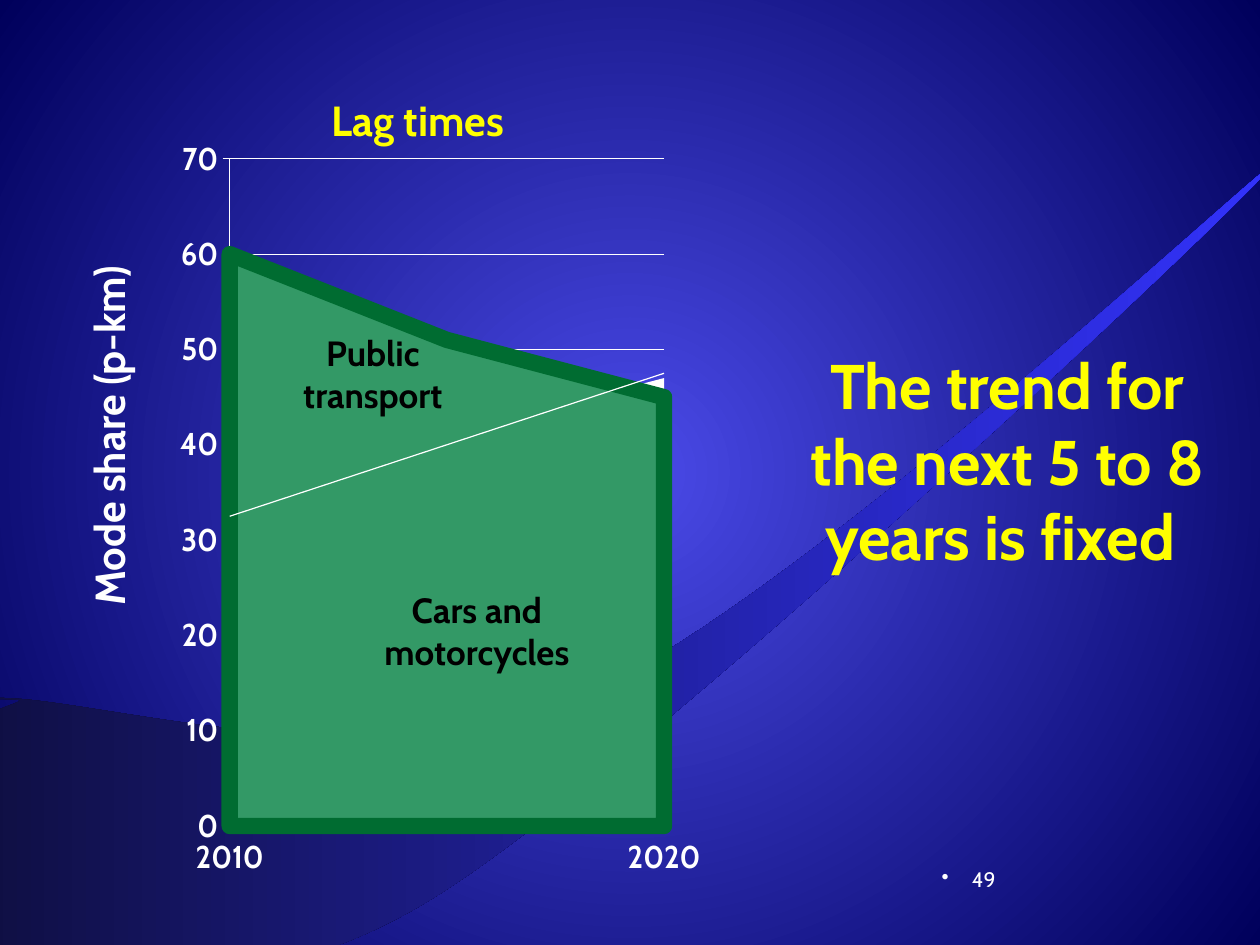
from pptx import Presentation
from pptx.chart.data import CategoryChartData
from pptx.dml.color import RGBColor
from pptx.enum.chart import XL_CHART_TYPE as CHART, XL_TICK_MARK as TICK
from pptx.enum.text import MSO_ANCHOR as ANCHOR, PP_ALIGN as ALIGN
from pptx.oxml import parse_xml
from pptx.oxml.ns import nsdecls, qn
from pptx.util import Inches, Pt
from lxml.etree import SubElement

FONT = "Cabin"
COLORS = {
    "bg_center": "4A4AE9", "bg_edge": "00005B",
    "swoosh_dark": "0D0D38", "swoosh_bright": "3333FF",
    "title": "FFFF00", "light": "FFFFFF", "label": "000000",
    "area": "339966", "area_line": "006C31",
}
SWOOSH_START = (-0.03, 7.6)
# Two control points and an end point for each curve
SWOOSH_CURVES = [
    ((0.55, 7.53), (1.76, 8.17), (3.45, 7.12)),
    ((5.13, 6.08), (9.89, 1.6), (10.08, 1.33)),
    ((10.28, 1.07), (6.29, 4.83), (4.61, 5.53)),
    ((2.93, 6.23), (0.73, 5.53), (-0.01, 5.54)),
    ((-0.75, 5.55), (0.17, 5.54), (0.16, 5.56)),
    ((0.16, 5.57), (0.01, 5.62), (-0.03, 5.64)),
]


def rgb(name):
    return RGBColor.from_string(COLORS[name])


def set_gradient(fill, start, end):
    fill.gradient()
    for stop, name, position in zip(fill.gradient_stops, (start, end), (0, 1)):
        stop.color.rgb = rgb(name)
        stop.position = position


def set_background(slide):
    """Radial gradient spreading from the middle of the slide."""
    set_gradient(slide.background.fill, "bg_center", "bg_edge")
    grad = slide.background._cSld.find(".//" + qn("a:gradFill"))
    grad.remove(grad.find(qn("a:lin")))
    radial = SubElement(grad, qn("a:path"))
    radial.set("path", "circle")
    rect = SubElement(radial, qn("a:fillToRect"))
    for side in "ltrb":
        rect.set(side, "50000")


def bend_segments(sp):
    """Turn every three straight segments into one cubic curve."""
    segments = list(sp._element.iter(qn("a:lnTo")))
    for i in range(0, len(segments), 3):
        curve = parse_xml(f'<a:cubicBezTo {nsdecls("a")}/>')
        segments[i].addprevious(curve)
        for segment in segments[i:i + 3]:
            curve.append(segment[0])
            segment.getparent().remove(segment)


def add_swoosh(slide):
    points = [(Inches(x), Inches(y)) for curve in SWOOSH_CURVES for x, y in curve]
    builder = slide.shapes.build_freeform(*map(Inches, SWOOSH_START))
    builder.add_line_segments(points, close=True)
    sp = builder.convert_to_shape()
    bend_segments(sp)
    sp.shadow.inherit = False
    set_gradient(sp.fill, "swoosh_dark", "swoosh_bright")
    sp.fill.gradient_angle = 0
    sp.line.fill.background()


def set_font(font, size, color, bold=True):
    font.name, font.size, font.bold = FONT, Pt(size), bold
    font.color.rgb = rgb(color)


def add_text(slide, box, text, size, color, bold=True, align=ALIGN.CENTER,
             anchor=ANCHOR.TOP, wrap=True, rotation=0):
    sp = slide.shapes.add_textbox(*map(Inches, box))
    sp.rotation = rotation
    tf = sp.text_frame
    tf.word_wrap, tf.vertical_anchor = wrap, anchor
    p = tf.paragraphs[0]
    p.text, p.alignment = text, align
    set_font(p.runs[0].font, size, color, bold)
    return p


def add_slide_number(slide, box):
    p = add_text(slide, box, "49", 12, "light", bold=False, align=ALIGN.RIGHT)
    pPr = p._p.get_or_add_pPr()
    pPr.set("marL", str(Inches(0.24)))
    pPr.set("indent", str(-Inches(0.24)))
    SubElement(pPr, qn("a:buChar")).set("char", "•")


def set_plot_layout(chart, x, y, w, h):
    plot_area = chart._chartSpace.chart.plotArea
    for old in plot_area.findall(qn("c:layout")):
        plot_area.remove(old)
    plot_area.insert(0, parse_xml(
        f'<c:layout {nsdecls("c")}><c:manualLayout><c:layoutTarget val="inner"/>'
        '<c:xMode val="edge"/><c:yMode val="edge"/>'
        f'<c:x val="{x}"/><c:y val="{y}"/><c:w val="{w}"/><c:h val="{h}"/>'
        '</c:manualLayout></c:layout>'))


def add_trendline(series, color):
    series._element.find(qn("c:cat")).addprevious(parse_xml(
        f'<c:trendline {nsdecls("c", "a")}><c:spPr><a:ln w="9525"><a:solidFill>'
        f'<a:srgbClr val="{COLORS[color]}"/></a:solidFill></a:ln></c:spPr>'
        '<c:trendlineType val="linear"/><c:dispRSqr val="0"/><c:dispEq val="0"/>'
        '</c:trendline>'))


def add_share_chart(slide, box):
    data = CategoryChartData()
    data.categories = ["2010", "", "2020"]
    data.add_series("Series 1", (60, 51, 45))
    data.add_series("Series 2", (32, 41, 47))
    chart = slide.shapes.add_chart(CHART.AREA, *map(Inches, box), data).chart
    chart.has_legend = chart.has_title = False
    set_font(chart.font, 18, "light")
    set_plot_layout(chart, 0.058, 0.025, 0.893, 0.895)

    category_axis, value_axis = chart.category_axis, chart.value_axis
    for axis in (category_axis, value_axis):
        axis.major_tick_mark, axis.minor_tick_mark = TICK.OUTSIDE, TICK.NONE
        set_font(axis.tick_labels.font, 18, "light")
    category_axis.has_major_gridlines = False
    value_axis.minimum_scale, value_axis.maximum_scale = 0, 70
    value_axis.major_unit = 10
    value_axis.has_major_gridlines = True
    for line in (category_axis.format.line, value_axis.format.line,
                 value_axis.major_gridlines.format.line):
        line.color.rgb, line.width = rgb("light"), Pt(0.75)
    value_axis._element.find(qn("c:crossBetween")).set("val", "midCat")

    public, cars = chart.plots[0].series
    for series, color in ((public, "area"), (cars, "light")):
        series.format.fill.solid()
        series.format.fill.fore_color.rgb = rgb(color)
    public.format.line.color.rgb = rgb("area_line")
    public.format.line.width = Pt(10)
    cars.format.line.fill.background()
    add_trendline(cars, "light")


def main():
    prs = Presentation()
    prs.slide_width, prs.slide_height = Inches(10), Inches(7.5)
    slide = prs.slides.add_slide(prs.slide_layouts[6])
    set_background(slide)
    add_swoosh(slide)
    add_text(slide, (0.46, 0.58, 5.71, 0.62), "Lag times", 24, "title",
             anchor=ANCHOR.BOTTOM)
    add_slide_number(slide, (6.75, 6.83, 1.25, 0.5))
    add_share_chart(slide, (1.43, 1.11, 4.13, 5.92))
    add_text(slide, (2.13, 2.58, 1.66, 0.77), "Public transport", 20, "label")
    add_text(slide, (2.81, 4.62, 1.95, 0.77), "Cars and motorcycles", 20, "label")
    add_text(slide, (-0.86, 3.21, 3.44, 0.5), "Mode share (p-km)", 24, "light",
             wrap=False, rotation=270)
    add_text(slide, (6.15, 2.7, 3.69, 2.52),
             "The trend for the next 5 to 8 years is fixed ", 36, "title")
    prs.save("out.pptx")


if __name__ == "__main__":
    main()
